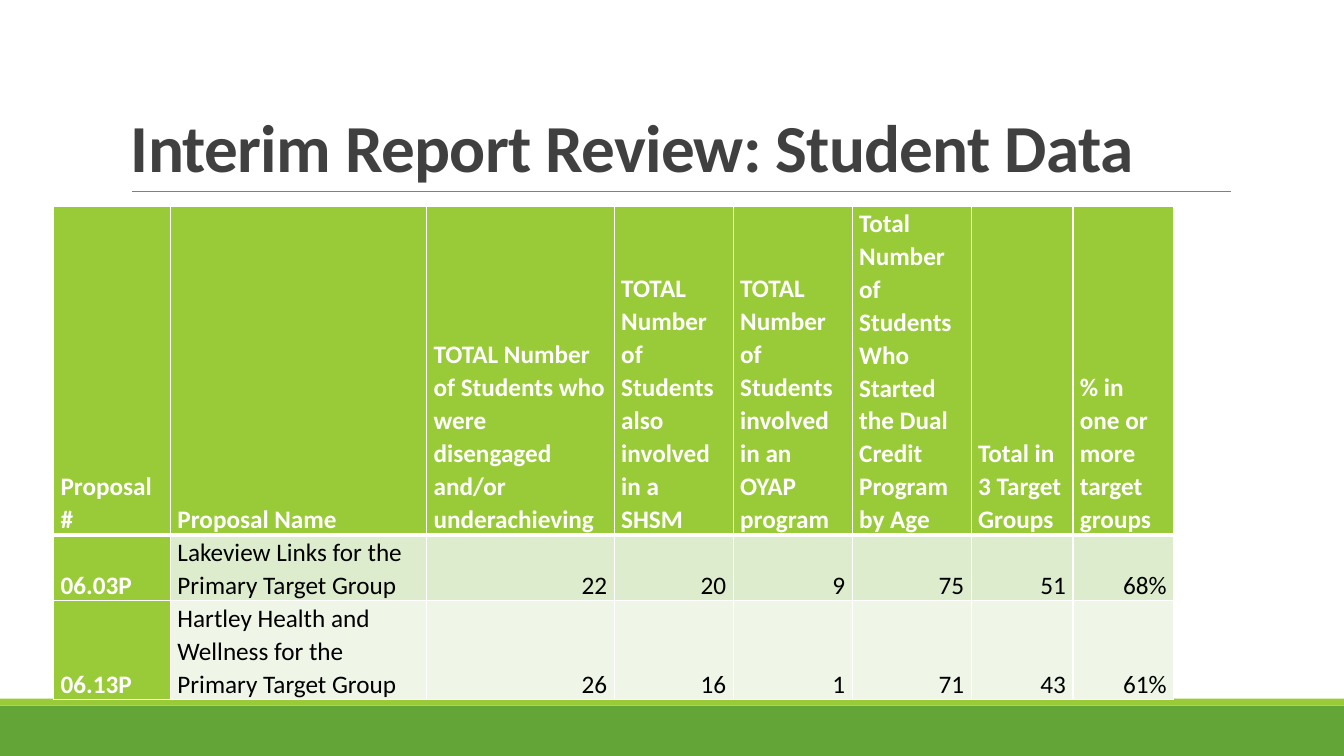
"""Build the student data slide with its title, footer bands and table."""
from dataclasses import dataclass

import pptx
import pptx.dml.color
import pptx.enum.shapes
import pptx.enum.text
import pptx.oxml.ns
import pptx.util
from lxml import etree

Pt = pptx.util.Pt
ANCHOR = pptx.enum.text.MSO_ANCHOR
ALIGN = pptx.enum.text.PP_ALIGN
FONT = "Calibri"
HUES = {
    "white": "FFFFFF", "black": "000000", "title": "404040", "rule": "808080",
    "green": "63A537", "lime": "99CB38", "mint": "DEECCE", "pale": "EFF6E8",
}


@dataclass
class Band:
    top: float
    height: float
    hue: str


@dataclass
class Column:
    width: float
    head: str
    cells: tuple[str, str]


BANDS = [Band(504, 36, "green"), Band(499, 5, "lime")]
ROWS = [234.5, 47.2, 70.7]
STRIPES = ["lime", "mint", "pale"]
COLUMNS = [
    Column(83.5, "Proposal #", ("06.03P", "06.13P")),
    Column(183, "Proposal Name", ("Lakeview Links for the Primary Target Group",
                                  "Hartley Health and Wellness for the Primary Target Group")),
    Column(134, "TOTAL Number of Students who were disengaged and/or underachieving",
           ("22", "26")),
    Column(85, "TOTAL Number of Students also involved in a SHSM", ("20", "16")),
    Column(85, "TOTAL Number of Students involved in an OYAP program", ("9", "1")),
    Column(85, "Total Number of Students Who Started the Dual Credit Program by Age",
           ("75", "71")),
    Column(72.7, "Total in 3 Target Groups", ("51", "43")),
    Column(72, "% in one or more target groups", ("68%", "61%")),
]


def shade(hue: str) -> pptx.dml.color.RGBColor:
    return pptx.dml.color.RGBColor.from_string(HUES[hue])


def add_run(para, text: str, size: float, hue: str, bold: bool):
    run = para.add_run()
    run.text = text
    run.font.name = FONT
    run.font.size = Pt(size)
    run.font.bold = bold
    run.font.color.rgb = shade(hue)
    return run


def draw_band(slide, band: Band) -> None:
    kind = pptx.enum.shapes.MSO_SHAPE.RECTANGLE
    shape = slide.shapes.add_shape(kind, 0, Pt(band.top), Pt(960), Pt(band.height))
    shape.shadow.inherit = False
    shape.fill.solid()
    shape.fill.fore_color.rgb = shade(band.hue)
    shape.line.fill.background()


def draw_rule(slide) -> None:
    kind = pptx.enum.shapes.MSO_CONNECTOR.STRAIGHT
    rule = slide.shapes.add_connector(kind, Pt(94.3), Pt(136.8), Pt(879), Pt(136.8))
    rule.line.color.rgb = shade("rule")
    rule.line.width = Pt(0.5)
    etree.SubElement(rule._element.spPr, pptx.oxml.ns.qn("a:effectLst"))


def draw_title(slide) -> None:
    box = slide.shapes.add_textbox(Pt(86.4), Pt(22.3), Pt(792), Pt(114.5))
    frame = box.text_frame
    frame.word_wrap = True
    frame.vertical_anchor = ANCHOR.BOTTOM
    para = frame.paragraphs[0]
    para.line_spacing = 0.85
    run = add_run(para, "Interim Report Review: Student Data", 48, "title", True)
    run.font._element.set("spc", "-50")


def set_edge(cell, rank: int, side: str, width: float) -> None:
    qn = pptx.oxml.ns.qn
    edge = etree.Element(qn(f"a:ln{side}"), w=str(Pt(width)))
    fill = etree.SubElement(edge, qn("a:solidFill"))
    etree.SubElement(fill, qn("a:srgbClr"), val=HUES["white"])
    cell._tc.get_or_add_tcPr().insert(rank, edge)


def fill_cell(cell, text: str, row: int, col: int) -> None:
    strong = row == 0 or col == 0
    cell.fill.solid()
    cell.fill.fore_color.rgb = shade("lime" if strong else STRIPES[row])
    cell.vertical_anchor = ANCHOR.BOTTOM
    cell.margin_left = cell.margin_right = Pt(5)
    cell.margin_top = cell.margin_bottom = 0
    para = cell.text_frame.paragraphs[0]
    para.line_spacing = 1.07
    para.space_after = Pt(8)
    para.alignment = ALIGN.RIGHT if row > 0 and col > 1 else ALIGN.LEFT
    add_run(para, text, 18, "white" if strong else "black", strong)
    widths = {"L": 1, "R": 1, "T": 3 if row == 1 else 1, "B": 3 if row == 0 else 1}
    for rank, (side, width) in enumerate(widths.items()):
        set_edge(cell, rank, side, width)


def draw_table(slide) -> None:
    width = sum(column.width for column in COLUMNS)
    frame = slide.shapes.add_table(len(ROWS), len(COLUMNS), Pt(38.3), Pt(147.5),
                                   Pt(width), Pt(sum(ROWS)))
    table = frame.table
    for row, height in enumerate(ROWS):
        table.rows[row].height = Pt(height)
    for col, column in enumerate(COLUMNS):
        table.columns[col].width = Pt(column.width)
        for row, text in enumerate((column.head, *column.cells)):
            fill_cell(table.cell(row, col), text, row, col)


def main() -> None:
    deck = pptx.Presentation()
    deck.slide_width, deck.slide_height = Pt(960), Pt(540)
    slide = deck.slides.add_slide(deck.slide_layouts[6])
    for band in BANDS:
        draw_band(slide, band)
    draw_rule(slide)
    draw_title(slide)
    draw_table(slide)
    deck.save("out.pptx")


if __name__ == "__main__":
    main()
